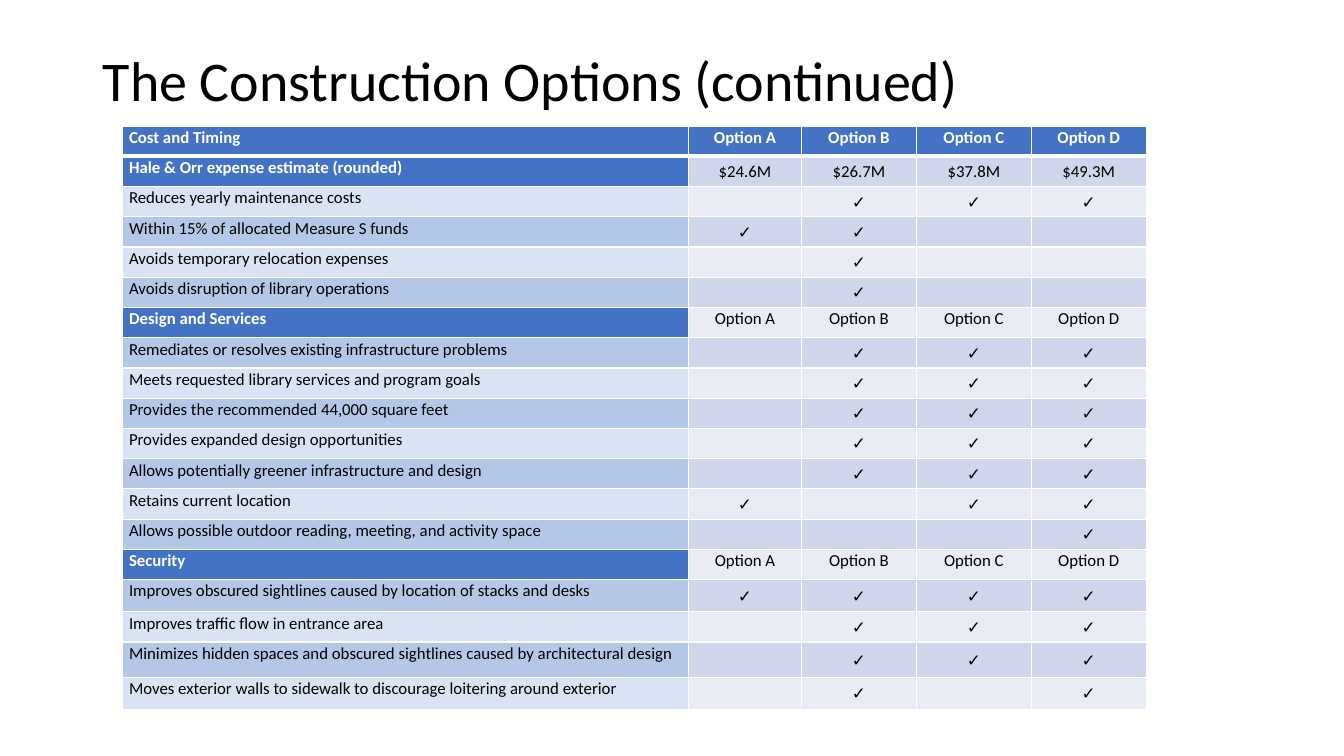
from lxml import etree
from pptx import Presentation
from pptx import util as u
from pptx.dml.color import RGBColor
from pptx.enum import text
from pptx.oxml import ns

WHITE = RGBColor(0xFF, 0xFF, 0xFF)
BLACK = RGBColor(0x00, 0x00, 0x00)
HEADING_BLUE = RGBColor(0x44, 0x72, 0xC4)
LABEL_FILLS = (RGBColor(0xDA, 0xE3, 0xF3), RGBColor(0xB4, 0xC7, 0xE7))
OPTION_FILLS = (RGBColor(0xE9, 0xEB, 0xF5), RGBColor(0xCF, 0xD5, 0xEA))
FONT = "Calibri"
OPTIONS = "ABCD"
OPTION_NAMES = [f"Option {letter}" for letter in OPTIONS]
ESTIMATE = "Hale & Orr expense estimate (rounded)"
COSTS = ["$24.6M", "$26.7M", "$37.8M", "$49.3M"]

SECTIONS = {
    "Cost and Timing": [
        (ESTIMATE, COSTS),
        ("Reduces yearly maintenance costs", "BCD"),
        ("Within 15% of allocated Measure S funds", "AB"),
        ("Avoids temporary relocation expenses", "B"),
        ("Avoids disruption of library operations", "B"),
    ],
    "Design and Services": [
        ("Remediates or resolves existing infrastructure problems", "BCD"),
        ("Meets requested library services and program goals", "BCD"),
        ("Provides the recommended 44,000 square feet", "BCD"),
        ("Provides expanded design opportunities", "BCD"),
        ("Allows potentially greener infrastructure and design", "BCD"),
        ("Retains current location", "ACD"),
        ("Allows possible outdoor reading, meeting, and activity space", "D"),
    ],
    "Security": [
        ("Improves obscured sightlines caused by location of stacks and desks", "ABCD"),
        ("Improves traffic flow in entrance area", "BCD"),
        ("Minimizes hidden spaces and obscured sightlines caused by architectural design", "BCD"),
        ("Moves exterior walls to sidewalk to discourage loitering around exterior", "BD"),
    ],
}
COLUMN_WIDTHS = [5.62, 1.12, 1.14, 1.14, 1.14]
ROW_HEIGHT = 0.3
TALLER_ROWS = {15: 0.32, 17: 0.35, 18: 0.32}


def table_rows():
    rows = []
    for heading, criteria in SECTIONS.items():
        rows.append([heading, *OPTION_NAMES])
        for label, marks in criteria:
            if label != ESTIMATE:
                marks = ["✓" if letter in marks else "" for letter in OPTIONS]
            rows.append([label, *marks])
    return rows


def add_borders(cell, bottom_width):
    properties = cell._tc.get_or_add_tcPr()
    widths = {"a:lnL": 1, "a:lnR": 1, "a:lnT": 1, "a:lnB": bottom_width}
    for position, (tag, width) in enumerate(widths.items()):
        line = etree.Element(ns.qn(tag), w=str(u.Pt(width)))
        fill = etree.SubElement(line, ns.qn("a:solidFill"))
        etree.SubElement(fill, ns.qn("a:srgbClr"), val=str(WHITE))
        properties.insert(position, line)


def format_cell(cell, content, fill, color, bold, centered, middle, bottom_width):
    cell.text = content
    cell.fill.solid()
    cell.fill.fore_color.rgb = fill
    cell.margin_left = cell.margin_right = u.Inches(0.07)
    cell.margin_top = cell.margin_bottom = 0
    cell.vertical_anchor = text.MSO_ANCHOR.MIDDLE if middle else text.MSO_ANCHOR.TOP
    paragraph = cell.text_frame.paragraphs[0]
    paragraph.alignment = text.PP_ALIGN.CENTER if centered else text.PP_ALIGN.LEFT
    paragraph.line_spacing = 1.07
    paragraph.font.name = FONT
    paragraph.font.size = u.Pt(12)
    paragraph.font.bold = bold
    paragraph.font.color.rgb = color
    add_borders(cell, bottom_width)


def add_options_table(slide, left, top, width, height):
    rows = table_rows()
    frame = slide.shapes.add_table(
        len(rows), len(COLUMN_WIDTHS),
        u.Inches(left), u.Inches(top), u.Inches(width), u.Inches(height))
    table = frame.table
    for column, column_width in zip(table.columns, COLUMN_WIDTHS):
        column.width = u.Inches(column_width)
    for row_index, row in enumerate(rows):
        table.rows[row_index].height = u.Inches(TALLER_ROWS.get(row_index, ROW_HEIGHT))
        is_heading = row[0] in SECTIONS
        for column_index, content in enumerate(row):
            is_label = column_index == 0
            highlighted = row_index == 0 or is_label and (is_heading or content == ESTIMATE)
            fills = LABEL_FILLS if is_label else OPTION_FILLS
            format_cell(
                table.cell(row_index, column_index), content,
                fill=HEADING_BLUE if highlighted else fills[row_index % 2],
                color=WHITE if highlighted else BLACK,
                bold=highlighted,
                centered=not is_label,
                middle=not is_label and not is_heading,
                bottom_width=3 if row_index == 0 else 1)


def add_title(slide, left, top, width, height):
    title = slide.shapes.title
    title.left, title.top = u.Inches(left), u.Inches(top)
    title.width, title.height = u.Inches(width), u.Inches(height)
    title.text = "The Construction Options (continued)"
    frame = title.text_frame
    frame.auto_size = text.MSO_AUTO_SIZE.NONE
    frame.vertical_anchor = text.MSO_ANCHOR.MIDDLE
    paragraph = frame.paragraphs[0]
    paragraph.alignment = text.PP_ALIGN.LEFT
    paragraph.line_spacing = 0.9
    paragraph.font.name = FONT
    paragraph.font.size = u.Pt(40)
    paragraph.font.color.rgb = BLACK


def main():
    presentation = Presentation()
    presentation.slide_width = u.Inches(13.33)
    presentation.slide_height = u.Inches(7.5)
    slide = presentation.slides.add_slide(presentation.slide_layouts[5])
    add_title(slide, 0.92, 0.4, 11.5, 0.85)
    add_options_table(slide, 1.21, 1.25, 10.15, 5.78)
    presentation.save("out.pptx")


if __name__ == "__main__":
    main()
